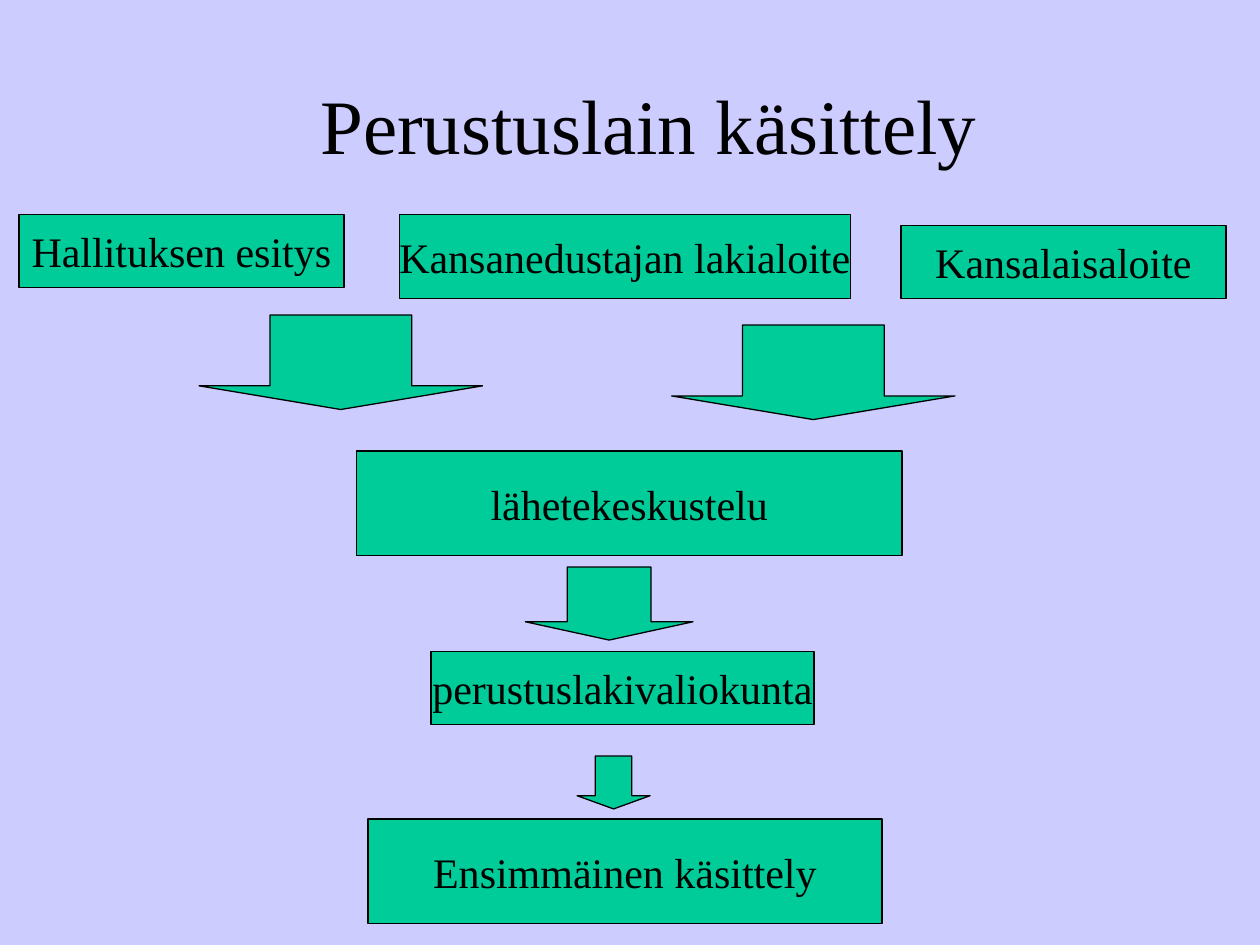
"""Build the slide on how a constitutional bill is handled."""
from dataclasses import dataclass

from pptx import Presentation
from pptx.dml.color import RGBColor
from pptx.enum import shapes, text
from pptx.util import Inches, Pt


@dataclass(frozen=True)
class Theme:
    """Colours, font and sizes of the slide."""
    back: RGBColor = RGBColor(0xCC, 0xCC, 0xFF)
    fill: RGBColor = RGBColor(0x00, 0xCC, 0x99)
    ink: RGBColor = RGBColor(0, 0, 0)
    font: str = "Times New Roman"
    head: int = 44
    body: int = 24
    line: float = 0.75


@dataclass(frozen=True)
class Node:
    """A box with a label, or an arrow when the label is empty."""
    left: float
    top: float
    width: float
    height: float
    label: str = ""


THEME = Theme()
TITLE = Node(0.9, 0.36, 8.5, 1.25, "Perustuslain käsittely")
STEPS = (
    Node(0.15, 1.7, 2.58, 0.58, "Hallituksen esitys"),
    Node(3.17, 1.7, 3.58, 0.67, "Kansanedustajan lakialoite"),
    Node(7.15, 1.79, 2.58, 0.58, "Kansalaisaloite"),
    Node(1.58, 2.5, 2.25, 0.75),
    Node(5.33, 2.58, 2.25, 0.75),
    Node(2.83, 3.58, 4.33, 0.83, "lähetekeskustelu"),
    Node(4.17, 4.5, 1.33, 0.58),
    Node(3.42, 5.17, 3.04, 0.58, "perustuslakivaliokunta"),
    Node(4.58, 6, 0.58, 0.42),
    Node(2.92, 6.5, 4.08, 0.83, "Ensimmäinen käsittely"),
)


def place(node: Node) -> list:
    """Return the left, top, width and height of a node as lengths."""
    return [Inches(n) for n in (node.left, node.top, node.width, node.height)]


def write(shape, label: str, *, size: int = THEME.body, wrap: bool = False) -> None:
    """Write a centred label into a shape."""
    frame = shape.text_frame
    frame.text = label
    frame.word_wrap = wrap
    frame.auto_size = text.MSO_AUTO_SIZE.NONE
    frame.vertical_anchor = text.MSO_ANCHOR.MIDDLE
    para = frame.paragraphs[0]
    para.alignment = text.PP_ALIGN.CENTER
    font = para.runs[0].font
    font.name, font.size = THEME.font, Pt(size)
    font.color.rgb = THEME.ink


def draw(slide, node: Node) -> None:
    """Draw a node as a labelled box or as a down arrow."""
    kinds = shapes.MSO_SHAPE
    kind = kinds.RECTANGLE if node.label else kinds.DOWN_ARROW
    shape = slide.shapes.add_shape(kind, *place(node))
    shape.shadow.inherit = False
    shape.fill.solid()
    shape.fill.fore_color.rgb = THEME.fill
    shape.line.color.rgb = THEME.ink
    shape.line.width = Pt(THEME.line)
    if node.label:
        write(shape, node.label)
    else:
        shape.adjustments[0], shape.adjustments[1] = 0.5, 0.25


def main() -> None:
    """Build and save the slide."""
    deck = Presentation()
    deck.slide_width, deck.slide_height = Inches(10), Inches(7.5)
    slide = deck.slides.add_slide(deck.slide_layouts[5])
    slide.background.fill.solid()
    slide.background.fill.fore_color.rgb = THEME.back
    title = slide.shapes.title
    title.left, title.top, title.width, title.height = place(TITLE)
    write(title, TITLE.label, size=THEME.head, wrap=True)
    for node in STEPS:
        draw(slide, node)
    deck.save("out.pptx")


if __name__ == "__main__":
    main()
